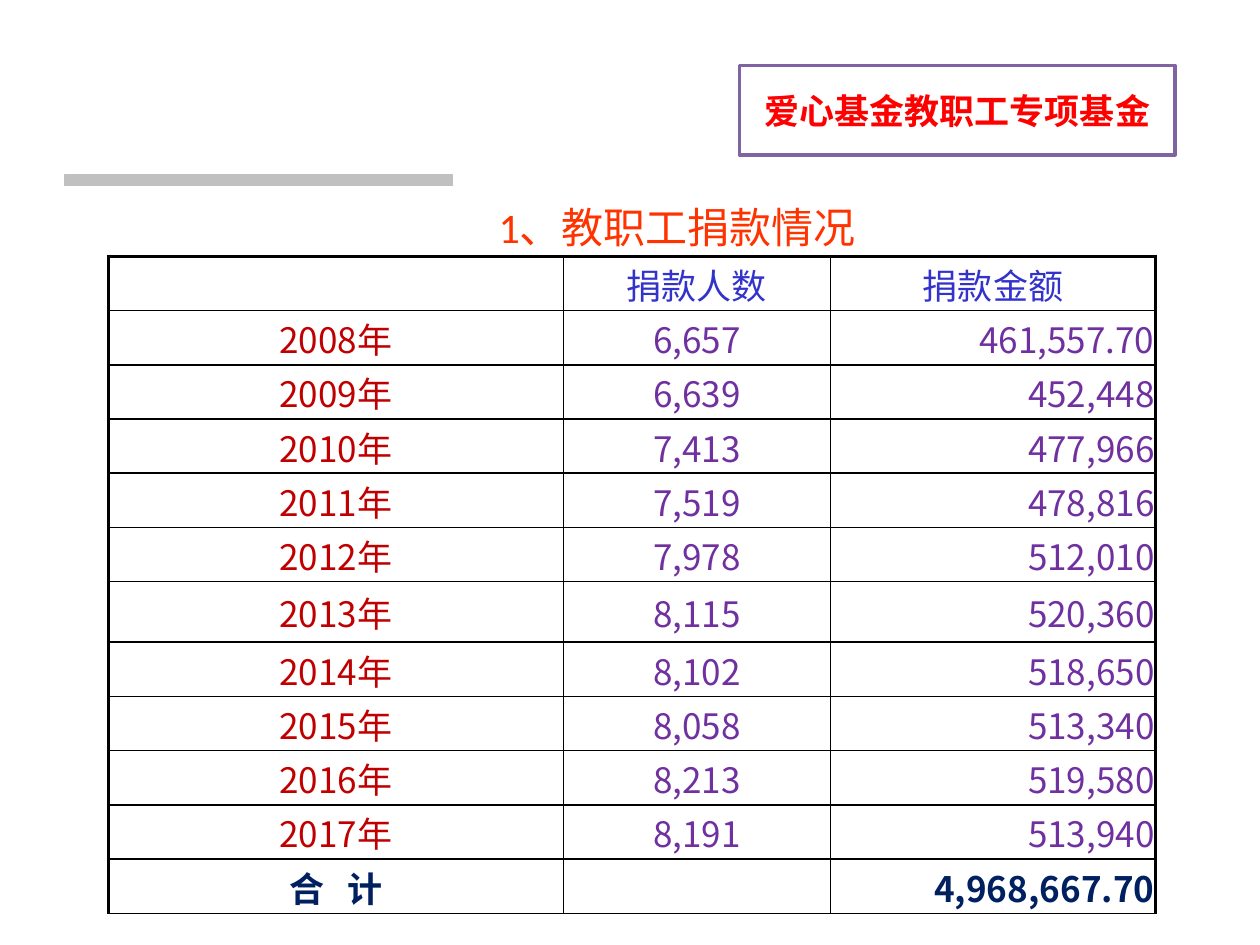
import pptx
import pptx.dml.color
import pptx.enum.shapes
import pptx.enum.text
import pptx.oxml.ns
import pptx.util
from lxml import etree

Pt = pptx.util.Pt
ALIGN = pptx.enum.text.PP_ALIGN
ANCHOR = pptx.enum.text.MSO_ANCHOR
RECTANGLE = pptx.enum.shapes.MSO_SHAPE.RECTANGLE

BADGE = "爱心基金教职工专项基金"
HEADING = "1、教职工捐款情况"
HEADER = ("", "捐款人数", "捐款金额")
DONATIONS = [
    ("2008年", "6,657", "461,557.70"),
    ("2009年", "6,639", "452,448"),
    ("2010年", "7,413", "477,966"),
    ("2011年", "7,519", "478,816"),
    ("2012年", "7,978", "512,010"),
    ("2013年", "8,115", "520,360"),
    ("2014年", "8,102", "518,650"),
    ("2015年", "8,058", "513,340"),
    ("2016年", "8,213", "519,580"),
    ("2017年", "8,191", "513,940"),
]
TOTAL = ("合   计", "", "4,968,667.70")

COLORS = {
    "white": "FFFFFF", "bar": "C0C0C0", "badge_line": "8064A2",
    "badge": "FF0000", "heading": "FF3300", "header": "3333CC",
    "year": "C00000", "value": "7030A0", "total": "002060", "border": "000000",
}
CJK_FONT = "Noto Sans CJK SC"
COLUMN_WIDTHS = (260, 152.5, 186)
ROW_HEIGHT, TALL_ROW_HEIGHT, TALL_ROW = 31, 34.6, 6
THIN, THICK = 1, 2.25


def rgb(name):
    return pptx.dml.color.RGBColor.from_string(COLORS[name])


def write(frame, text, *, size=20, color, font=CJK_FONT, bold=False,
          align=ALIGN.CENTER, line_spacing=None):
    para = frame.paragraphs[0]
    para.alignment = align
    para.line_spacing = line_spacing
    if not text:
        para.font.size = Pt(size)
        return
    span = para.add_run()
    span.text = text
    span.font.size = Pt(size)
    span.font.bold = bold
    span.font.name = font
    span.font.color.rgb = rgb(color)
    east_asian = etree.SubElement(span.font._element, pptx.oxml.ns.qn("a:ea"))
    east_asian.set("typeface", CJK_FONT)


def add_rectangle(slide, left, top, width, height, *, fill, line, weight):
    box = slide.shapes.add_shape(RECTANGLE, Pt(left), Pt(top), Pt(width), Pt(height))
    box.shadow.inherit = False
    box.fill.solid()
    box.fill.fore_color.rgb = rgb(fill)
    box.line.color.rgb = rgb(line)
    box.line.width = Pt(weight)
    return box


def set_borders(cell, **weights):
    """Draw the cell's sides; weights must come in the order L, R, T, B."""
    properties = cell._tc.get_or_add_tcPr()
    for side, weight in weights.items():
        line = etree.SubElement(properties, pptx.oxml.ns.qn(f"a:ln{side}"), w=str(Pt(weight)))
        fill = etree.SubElement(line, pptx.oxml.ns.qn("a:solidFill"))
        etree.SubElement(fill, pptx.oxml.ns.qn("a:srgbClr"), val=COLORS["border"])


def add_donation_table(slide, left, top):
    rows = [HEADER, *DONATIONS, TOTAL]
    last_row, last_column = len(rows) - 1, len(COLUMN_WIDTHS) - 1
    heights = [TALL_ROW_HEIGHT if i == TALL_ROW else ROW_HEIGHT for i in range(len(rows))]
    table = slide.shapes.add_table(
        len(rows), len(COLUMN_WIDTHS), Pt(left), Pt(top),
        Pt(sum(COLUMN_WIDTHS)), Pt(sum(heights))).table
    table.first_row = table.horz_banding = False
    for column, width in zip(table.columns, COLUMN_WIDTHS):
        column.width = Pt(width)
    for i, (row, height) in enumerate(zip(rows, heights)):
        table.rows[i].height = Pt(height)
        for j, text in enumerate(row):
            cell = table.cell(i, j)
            set_borders(cell, L=THICK if j == 0 else THIN,
                        R=THICK if j == last_column else THIN,
                        T=THICK if i == 0 else THIN, B=THIN)
            cell.fill.background()
            cell.margin_left = cell.margin_right = Pt(0.72)
            cell.margin_top, cell.margin_bottom = Pt(0.72), Pt(0)
            cell.vertical_anchor = ANCHOR.MIDDLE
            if i == 0:
                cell.margin_top = Pt(1.5)
                cell.vertical_anchor = ANCHOR.TOP
                write(cell.text_frame, text, color="header", font="Arial")
                continue
            total = i == last_row
            color = "total" if total else "year" if j == 0 else "value"
            write(cell.text_frame, text, color=color, bold=total,
                  align=ALIGN.RIGHT if j == last_column else ALIGN.CENTER)


def main():
    deck = pptx.Presentation()
    deck.slide_width, deck.slide_height = Pt(720), Pt(540)
    slide = deck.slides.add_slide(deck.slide_layouts[5])

    add_rectangle(slide, 36.7, 100, 222, 6, fill="bar", line="bar", weight=0.75)

    title = slide.shapes.title
    title.left, title.top, title.width, title.height = Pt(73.5), Pt(94.3), Pt(627), Pt(116)
    title.text_frame.auto_size = pptx.enum.text.MSO_AUTO_SIZE.NONE
    title.text_frame.vertical_anchor = ANCHOR.TOP
    write(title.text_frame, HEADING, size=24, color="heading", font="Calibri",
          line_spacing=1.6)

    add_donation_table(slide, 62, 146.5)

    badge = add_rectangle(slide, 422.6, 37.5, 249, 51,
                          fill="white", line="badge_line", weight=2)
    badge.text_frame.vertical_anchor = ANCHOR.MIDDLE
    write(badge.text_frame, BADGE, color="badge", font="Arial", bold=True)

    deck.save("out.pptx")


if __name__ == "__main__":
    main()
